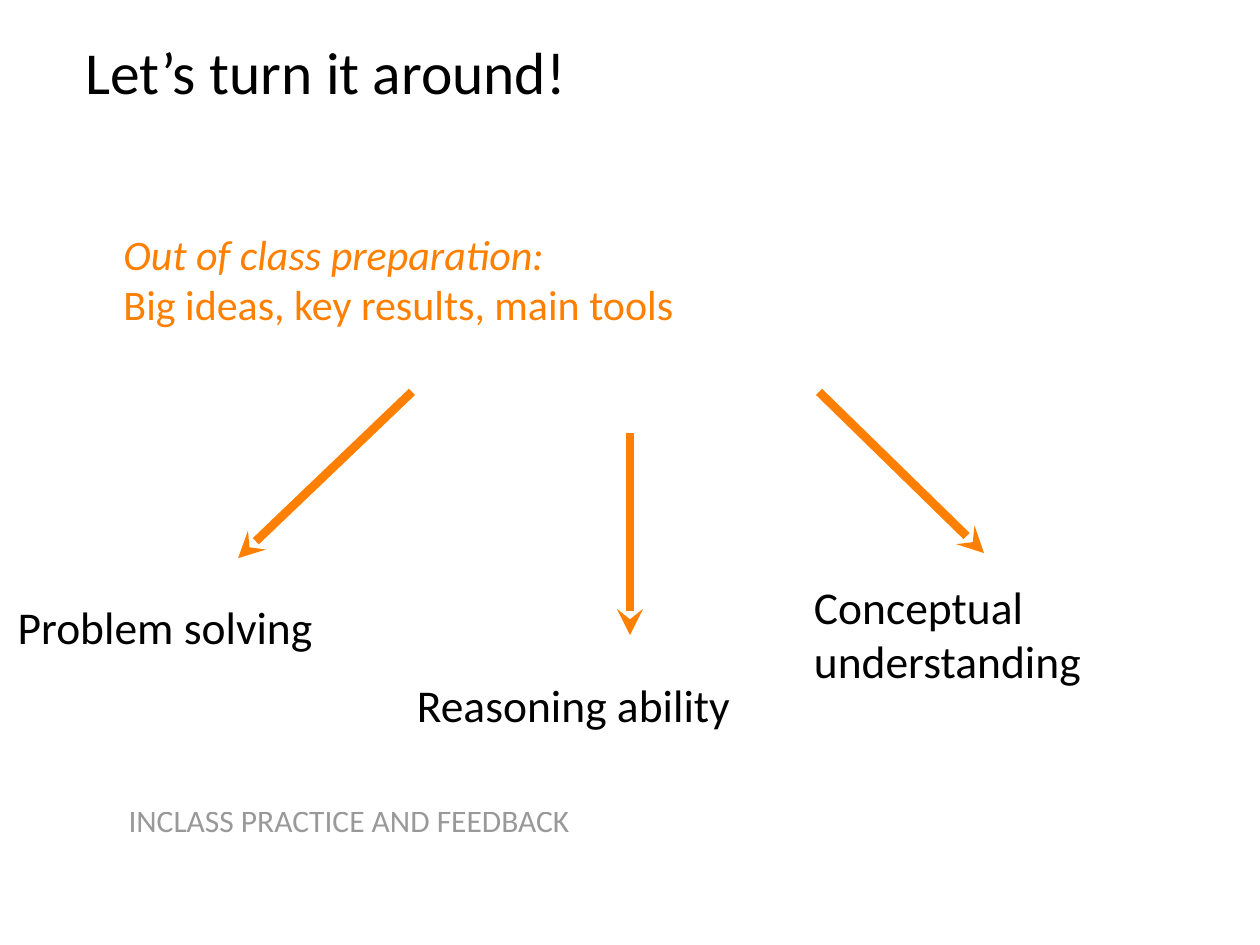
from pptx import Presentation
from pptx.dml.color import RGBColor
from pptx.enum.shapes import MSO_CONNECTOR
from pptx.enum.text import MSO_ANCHOR, PP_ALIGN
from pptx.oxml.ns import qn
from pptx.util import Inches, Pt
from lxml.etree import SubElement

ORANGE, BLACK = "FF8000", "000000"
WIDE, NARROW = 8.05, 3.37

PREPARATION = [("Out of class preparation:", True),
               ("Big ideas, key results, main tools", False)]
SKILLS = [
    ("Problem solving", (0.14, 4.51, NARROW, 0.92)),
    ("Reasoning ability", (3.31, 4.98, NARROW, 1.22)),
    ("Conceptual understanding", (6.46, 4.39, NARROW, 1.27)),
]
ARROWS = [
    ((1.89, 4.43), (3.27, 3.11)),
    ((5, 5.04), (5, 3.44)),
    ((7.81, 4.39), (6.5, 3.11)),
]


def rgb(color):
    """Turn a hex string into a colour."""
    return RGBColor.from_string(color)


def add_text(slide, box, lines, size, color, bottom=0, align=None):
    """Add a middle-anchored text box and return its runs."""
    frame = slide.shapes.add_textbox(*map(Inches, box)).text_frame
    frame.word_wrap = True
    frame.vertical_anchor = MSO_ANCHOR.MIDDLE
    frame.margin_left = frame.margin_right = frame.margin_top = 0
    frame.margin_bottom = Inches(bottom)
    paragraph = frame.paragraphs[0]
    paragraph.alignment = align
    for number, (words, italic) in enumerate(lines):
        if number:
            paragraph.add_line_break()
        run = paragraph.add_run()
        run.text = words
        run.font.name = "Calibri"
        run.font.size = Pt(size)
        run.font.italic = italic
        run.font.color.rgb = rgb(color)
    return paragraph.runs


def add_arrow(slide, tip, tail):
    """Draw a thick orange arrow whose stealth head sits at the tip."""
    arrow = slide.shapes.add_connector(
        MSO_CONNECTOR.STRAIGHT, *map(Inches, tip + tail))
    arrow.line.color.rgb = rgb(ORANGE)
    arrow.line.width = Pt(5)
    properties = arrow.line._get_or_add_ln()
    SubElement(properties, qn("a:headEnd"), type="stealth")
    SubElement(arrow._element.spPr, qn("a:effectLst"))


def main():
    """Build and save the slide."""
    deck = Presentation()
    deck.slide_width, deck.slide_height = Inches(10), Inches(7.5)
    slide = deck.slides.add_slide(deck.slide_layouts[6])

    add_text(slide, (0.98, 1.88, WIDE, 1.06), PREPARATION, 24, ORANGE, bottom=0.4)
    for skill, box in SKILLS:
        add_text(slide, box, [(skill, False)], 26, BLACK)
    add_text(slide, (0.68, 0.18, WIDE, 0.77),
             [("Let’s turn it around!", False)], 34, BLACK)
    for tip, tail in ARROWS:
        add_arrow(slide, tip, tail)
    practice = add_text(slide, (1.02, 5.98, WIDE, 1.06),
                        [("INCLASS PRACTICE AND FEEDBACK", False)], 18, BLACK,
                        align=PP_ALIGN.JUSTIFY)
    for run in practice:
        ink = run.font._element.find(".//" + qn("a:srgbClr"))
        SubElement(ink, qn("a:alpha"), val="40000")

    deck.save("out.pptx")


if __name__ == "__main__":
    main()
